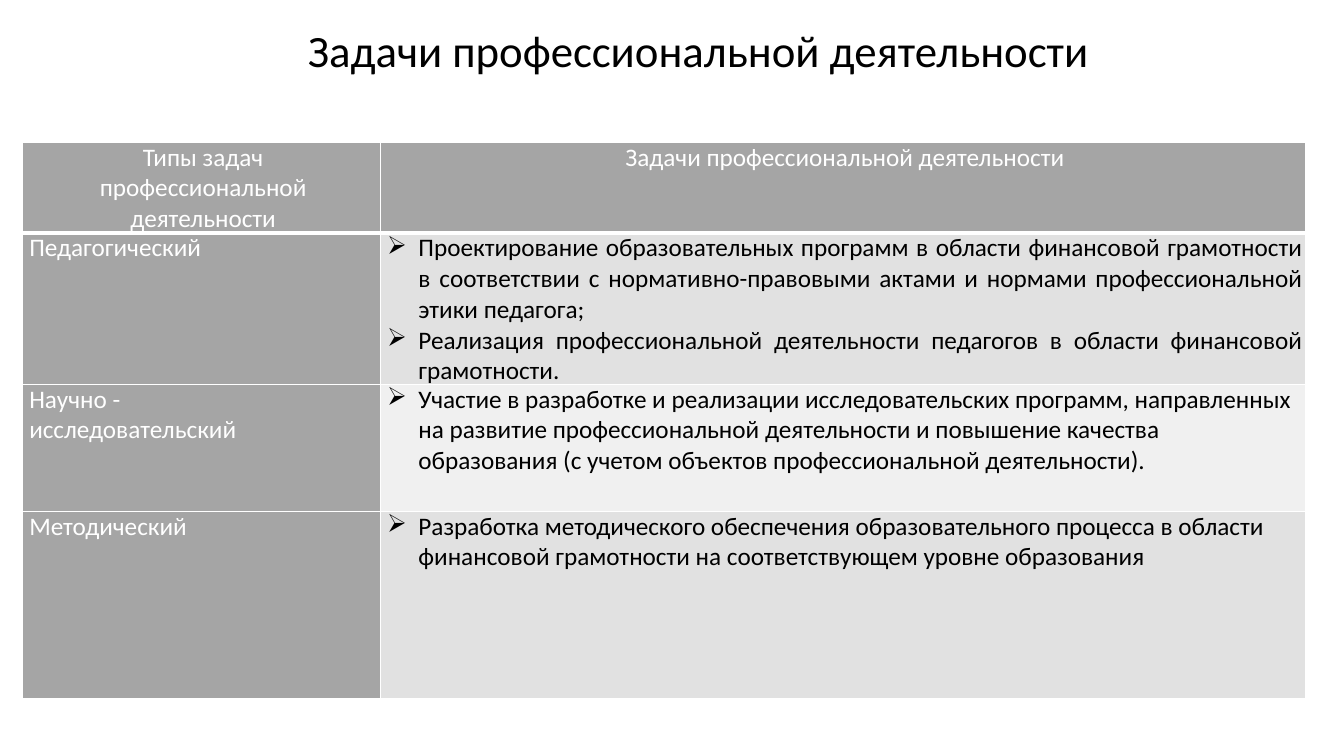
from lxml import etree
from pptx import Presentation
from pptx.dml.color import RGBColor
from pptx.enum.text import PP_ALIGN
from pptx.oxml.ns import qn
from pptx.util import Inches, Pt

LEFT, CENTER, JUSTIFY = PP_ALIGN.LEFT, PP_ALIGN.CENTER, PP_ALIGN.JUSTIFY
COLORS = {"white": "FFFFFF", "black": "000000", "gray": "A5A5A5", "band": "E1E1E1", "light": "F0F0F0"}
FONT = "Calibri"
TITLE = "Задачи профессиональной деятельности"
COLUMN_WIDTHS = [3.55, 9.18]
ROW_HEIGHTS = [0.72, 1.43, 1.26, 1.86]
TASK_FILLS = ["gray", "band", "light", "band"]
ROWS = [
    (
        [("Типы задач", CENTER), ("профессиональной деятельности", CENTER)],
        [(TITLE, CENTER)],
    ),
    (
        [("Педагогический", JUSTIFY)],
        [
            ("Проектирование образовательных программ в области финансовой грамотности в соответствии с нормативно-правовыми актами и нормами профессиональной этики педагога;", JUSTIFY),
            ("Реализация профессиональной деятельности педагогов в области финансовой грамотности.", JUSTIFY),
        ],
    ),
    (
        [("Научно -", LEFT), ("исследовательский", JUSTIFY)],
        [("Участие в разработке и реализации исследовательских программ, направленных на развитие профессиональной деятельности и повышение качества образования (с учетом объектов профессиональной деятельности).", LEFT)],
    ),
    (
        [("Методический", LEFT)],
        [("Разработка методического обеспечения образовательного процесса в области финансовой грамотности на соответствующем уровне образования", LEFT)],
    ),
]


def format_paragraph(para, text, align, size, color):
    para.text = text
    para.alignment = align
    for span in para.runs:
        span.font.name = FONT
        span.font.size = Pt(size)
        span.font.bold = False
        span.font.color.rgb = RGBColor.from_string(COLORS[color])


def set_borders(cell, bottom_width):
    properties = cell._tc.get_or_add_tcPr()
    sides = [("lnL", 1), ("lnR", 1), ("lnT", 1), ("lnB", bottom_width)]
    for position, (side, width) in enumerate(sides):
        line = etree.Element(qn(f"a:{side}"), w=str(Pt(width)))
        fill = etree.SubElement(line, qn("a:solidFill"))
        etree.SubElement(fill, qn("a:srgbClr"), val=COLORS["white"])
        properties.insert(position, line)


deck = Presentation()
deck.slide_width = Inches(13.33)
deck.slide_height = Inches(7.5)
page = deck.slides.add_slide(deck.slide_layouts[6])

title_box = page.shapes.add_textbox(Inches(1.59), Inches(0.24), Inches(10.66), Inches(0.57))
title_frame = title_box.text_frame
title_frame.word_wrap = True
title_frame.margin_left = Inches(0.12)
title_para = title_frame.paragraphs[0]
format_paragraph(title_para, TITLE, CENTER, 32, "black")
title_para.line_spacing = 0.9

table = page.shapes.add_table(
    len(ROWS), len(COLUMN_WIDTHS), Inches(0.22), Inches(1.41),
    Inches(sum(COLUMN_WIDTHS)), Inches(sum(ROW_HEIGHTS)),
).table
for column, width in zip(table.columns, COLUMN_WIDTHS):
    column.width = Inches(width)

for row_index, (row, height) in enumerate(zip(ROWS, ROW_HEIGHTS)):
    table.rows[row_index].height = Inches(height)
    for column_index, content in enumerate(row):
        is_task = row_index > 0 and column_index == 1
        cell = table.cell(row_index, column_index)
        cell.margin_left = cell.margin_right = Inches(0.03)
        cell.margin_top = cell.margin_bottom = 0
        cell.fill.solid()
        fill = TASK_FILLS[row_index] if is_task else "gray"
        cell.fill.fore_color.rgb = RGBColor.from_string(COLORS[fill])
        set_borders(cell, 3 if row_index == 0 else 1)
        frame = cell.text_frame
        for para_index, (text, align) in enumerate(content):
            para = frame.paragraphs[0] if para_index == 0 else frame.add_paragraph()
            format_paragraph(para, text, align, 18, "black" if is_task else "white")
            properties = para._p.get_or_add_pPr()
            properties.set("marL", str(Inches(0.35 if is_task else 0.04)))
            properties.set("indent", str(Inches(-0.31 if is_task else 0)))
            if is_task:
                etree.SubElement(properties, qn("a:buChar"), char="➢")

deck.save("out.pptx")
